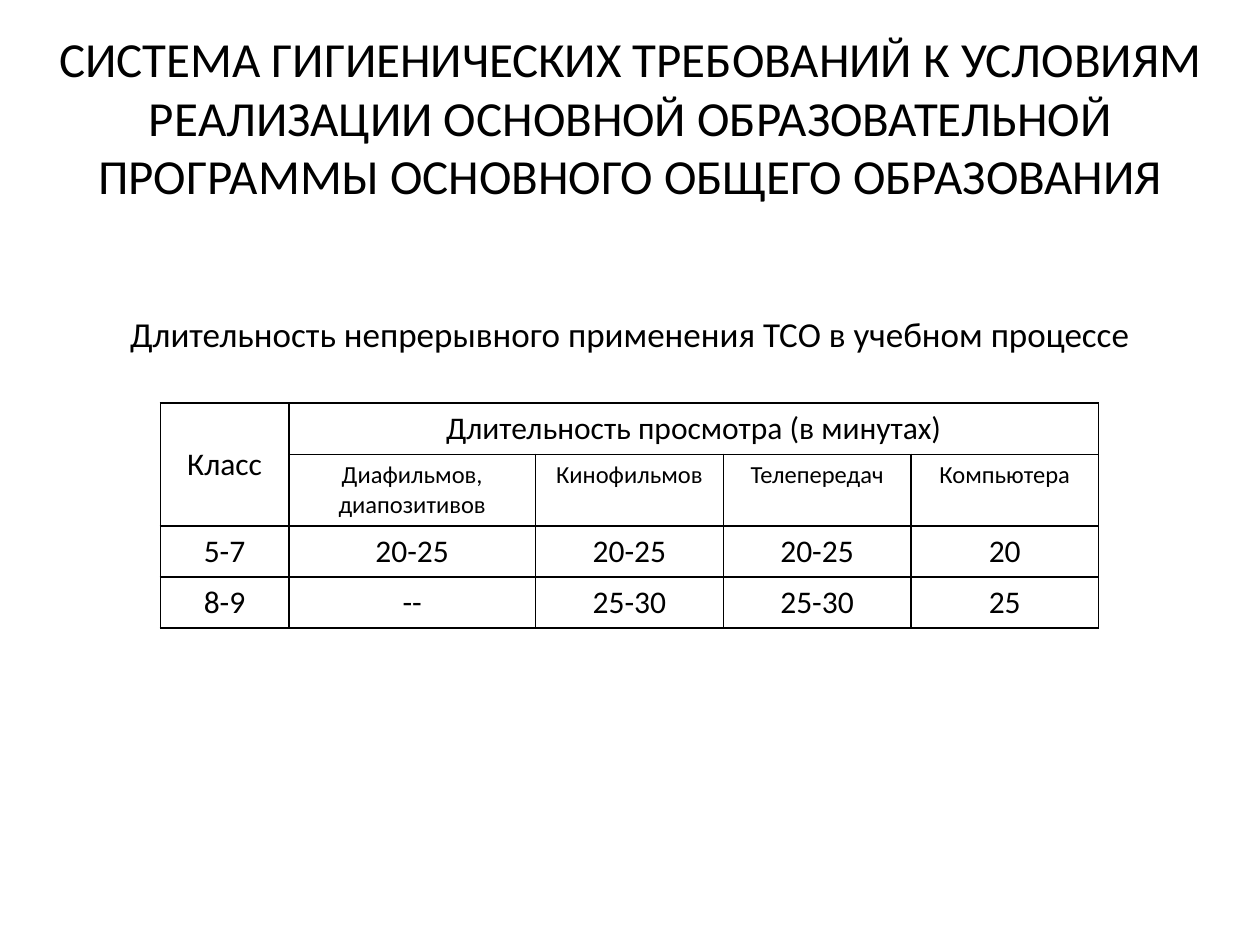
from dataclasses import dataclass

from lxml import etree
from pptx import Presentation
from pptx.dml.color import RGBColor
from pptx.enum.text import MSO_ANCHOR, MSO_AUTO_SIZE, PP_ALIGN
from pptx.oxml.ns import qn
from pptx.slide import Slide
from pptx.table import _Cell
from pptx.text.text import TextFrame
from pptx.util import Pt

CENTER = PP_ALIGN.CENTER
MIDDLE, TOP = MSO_ANCHOR.MIDDLE, MSO_ANCHOR.TOP
NO_FIT = MSO_AUTO_SIZE.NONE
FONT = "Calibri"
BLACK = "000000"
TITLE_ONLY = 5


@dataclass
class Box:
    left: float
    top: float
    width: float
    height: float

    def pts(self) -> tuple[Pt, Pt, Pt, Pt]:
        return Pt(self.left), Pt(self.top), Pt(self.width), Pt(self.height)


@dataclass
class Row:
    height: float
    size: float
    texts: list[str]


TITLE = (
    "СИСТЕМА ГИГИЕНИЧЕСКИХ ТРЕБОВАНИЙ К УСЛОВИЯМ РЕАЛИЗАЦИИ ОСНОВНОЙ "
    "ОБРАЗОВАТЕЛЬНОЙ ПРОГРАММЫ ОСНОВНОГО ОБЩЕГО ОБРАЗОВАНИЯ"
)
CAPTION = "Длительность непрерывного применения ТСО в учебном процессе"
WIDTHS = [73.5, 141, 107.25, 107.25, 107.25]
ROWS = [
    Row(29.2, 18, ["Класс", "Длительность просмотра (в минутах)", "", "", ""]),
    Row(40.8, 14, ["", "Диафильмов, диапозитивов", "Кинофильмов",
                   "Телепередач", "Компьютера"]),
    Row(29.2, 18, ["5-7", "20-25", "20-25", "20-25", "20"]),
    Row(29.2, 18, ["8-9", "--", "25-30", "25-30", "25"]),
]


def color(code: str) -> RGBColor:
    return RGBColor.from_string(code)


def write(frame: TextFrame, text: str, size: float) -> None:
    frame.text = text
    para = frame.paragraphs[0]
    para.alignment = CENTER
    for run in para.runs:
        run.font.name = FONT
        run.font.size = Pt(size)
        run.font.color.rgb = color(BLACK)


def border(cell: _Cell, width: float = 1) -> None:
    """Draw a line on all four sides; call before setting the fill."""
    props = cell._tc.get_or_add_tcPr()
    for side in ("a:lnL", "a:lnR", "a:lnT", "a:lnB"):
        line = etree.SubElement(props, qn(side), w=str(Pt(width)))
        fill = etree.SubElement(line, qn("a:solidFill"))
        etree.SubElement(fill, qn("a:srgbClr"), val=BLACK)


def add_title(slide: Slide, box: Box) -> None:
    title = slide.shapes.title
    title.left, title.top, title.width, title.height = box.pts()
    frame = title.text_frame
    frame.auto_size = NO_FIT
    frame.vertical_anchor = MIDDLE
    write(frame, TITLE, 28)


def add_caption(slide: Slide, box: Box) -> None:
    frame = slide.shapes.add_textbox(*box.pts()).text_frame
    frame.word_wrap = False
    frame.vertical_anchor = MIDDLE
    frame.margin_top, frame.margin_bottom = Pt(12.2), Pt(2.9)
    write(frame, CAPTION, 20)


def add_grid(slide: Slide, left: float, top: float) -> None:
    box = Box(left, top, sum(WIDTHS), sum(row.height for row in ROWS))
    table = slide.shapes.add_table(len(ROWS), len(WIDTHS), *box.pts()).table
    table.first_row = table.horz_banding = False
    for col, width in zip(table.columns, WIDTHS):
        col.width = Pt(width)
    for line, row in zip(table.rows, ROWS):
        line.height = Pt(row.height)
        for cell, text in zip(line.cells, row.texts):
            border(cell)
            cell.fill.background()
            cell.vertical_anchor = TOP
            write(cell.text_frame, text, row.size)
    grade = table.cell(0, 0)
    grade.merge(table.cell(1, 0))
    grade.vertical_anchor = MIDDLE
    table.cell(0, 1).merge(table.cell(0, 4))


def main() -> None:
    deck = Presentation()
    deck.slide_width, deck.slide_height = Pt(720), Pt(540)
    slide = deck.slides.add_slide(deck.slide_layouts[TITLE_ONLY])
    add_title(slide, Box(8.6, 21.6, 702.8, 90))
    add_caption(slide, Box(64.8, 166.3, 590.4, 39.6))
    add_grid(slide, 91.6, 230.4)
    deck.save("out.pptx")


if __name__ == "__main__":
    main()
